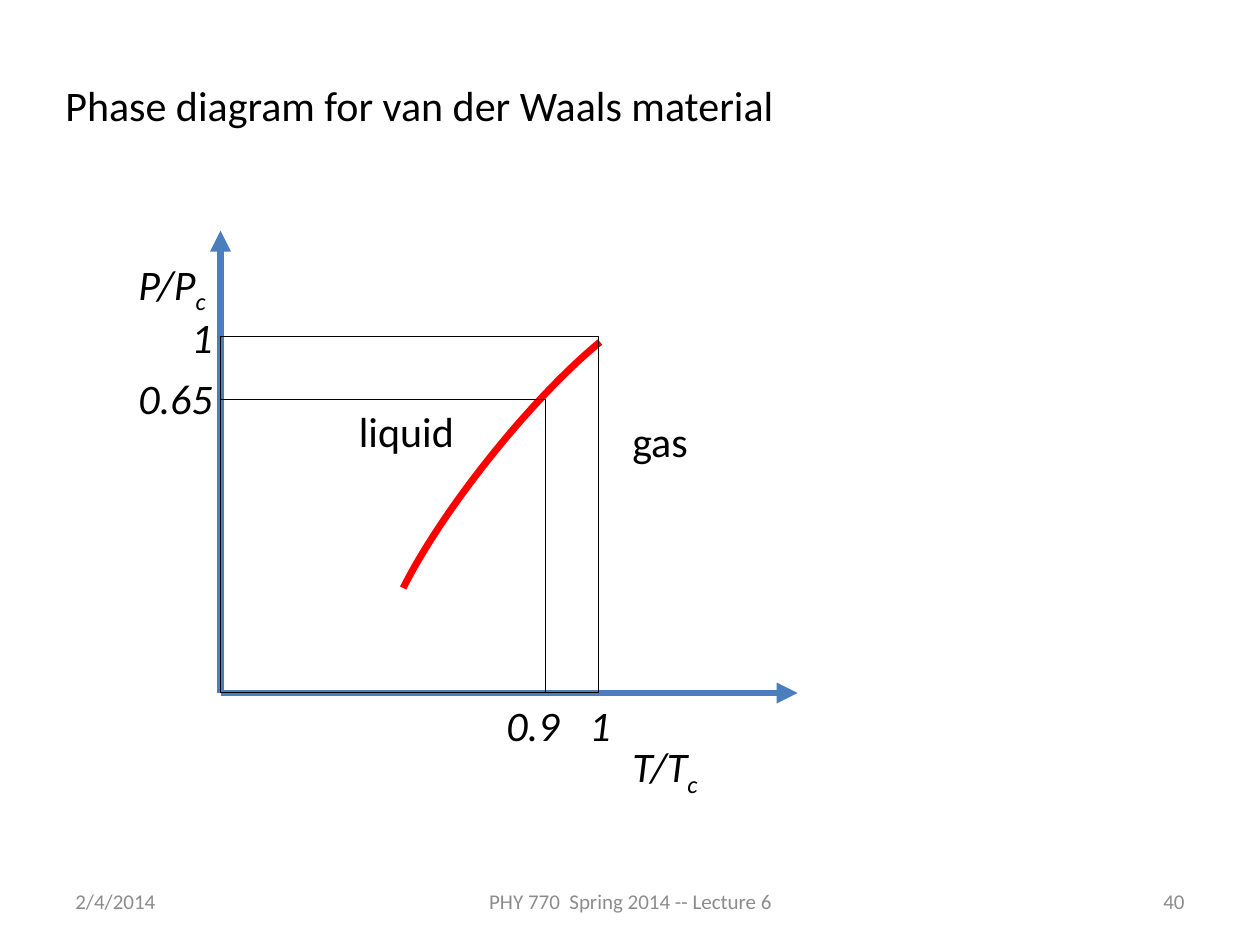
from pptx import Presentation
from pptx.dml.color import RGBColor
from pptx.enum import shapes, text
from pptx.oxml import parse_xml
from pptx.oxml.ns import nsdecls
from pptx.util import Inches, Pt

BLACK = RGBColor(0x00, 0x00, 0x00)
GRAY = RGBColor(0x8C, 0x8C, 0x8C)
BLUE = RGBColor(0x4B, 0x7E, 0xBC)
RED = RGBColor(0xFF, 0x00, 0x00)
ORIGIN_X, ORIGIN_Y = 1.75, 5.5

presentation = Presentation()
presentation.slide_width = Inches(10)
presentation.slide_height = Inches(7.5)
slide = presentation.slides.add_slide(presentation.slide_layouts[6])


def add_label(left, top, width, wording, subscript="", italic=False, size=24,
              color=BLACK, height=0.5, align=text.PP_ALIGN.LEFT,
              anchor=text.MSO_ANCHOR.TOP):
    box = slide.shapes.add_textbox(Inches(left), Inches(top), Inches(width), Inches(height))
    frame = box.text_frame
    frame.word_wrap = True
    frame.vertical_anchor = anchor
    paragraph = frame.paragraphs[0]
    paragraph.text = wording
    paragraph.alignment = align
    if subscript:
        run = paragraph.add_run()
        run.text = subscript
        run.font._element.set("baseline", "-25000")
    for run in paragraph.runs:
        run.font.name = "Calibri"
        run.font.size = Pt(size)
        run.font.italic = italic
        run.font.color.rgb = color


def add_outline(kind, left, top, width, height, color, weight):
    shape = slide.shapes.add_shape(kind, Inches(left), Inches(top), Inches(width), Inches(height))
    shape.shadow.inherit = False
    shape.fill.background()
    shape.line.color.rgb = color
    shape.line.width = Pt(weight)
    return shape


# Footer
for left, width, wording, align in [
    (0.5, 2.33, "2/4/2014", text.PP_ALIGN.LEFT),
    (3.42, 3.17, "PHY 770  Spring 2014 -- Lecture 6", text.PP_ALIGN.CENTER),
    (7.17, 2.33, "40", text.PP_ALIGN.RIGHT),
]:
    add_label(left, 6.95, width, wording, size=12, color=GRAY, height=0.4,
              align=align, anchor=text.MSO_ANCHOR.MIDDLE)

add_label(0.42, 0.58, 9.08, "Phase diagram for van der Waals material")

# Pressure and temperature axes
for end_x, end_y in [(ORIGIN_X, 1.83), (6.33, ORIGIN_Y)]:
    axis = slide.shapes.add_connector(
        shapes.MSO_CONNECTOR.STRAIGHT,
        Inches(ORIGIN_X), Inches(ORIGIN_Y), Inches(end_x), Inches(end_y))
    axis.line.color.rgb = BLUE
    axis.line.width = Pt(4)
    axis.line._get_or_add_ln().append(
        parse_xml(f'<a:tailEnd {nsdecls("a")} type="triangle"/>'))
    axis._element.spPr.append(parse_xml(f'<a:effectLst {nsdecls("a")}/>'))

# Coexistence curve
curve = add_outline(shapes.MSO_SHAPE.ARC, 2.42, 3.48, 3.54, 0.75, RED, 4)
curve.rotation = 308.7
curve.adjustments[0] = 115.17
curve.adjustments[1] = 208.78

# Guides from the axes to the marked points on the curve
for width, height in [(3, 2.83), (2.58, 2.33)]:
    add_outline(shapes.MSO_SHAPE.RECTANGLE, ORIGIN_X, ORIGIN_Y - height,
                width, height, BLACK, 0.5)

# Axis titles and values
for left, top, width, wording, subscript in [
    (1, 2, 1.17, "P/P", "c"),
    (4.92, 5.83, 1.17, "T/T", "c"),
    (4.58, 5.5, 0.42, "1", ""),
    (1.42, 2.42, 0.42, "1", ""),
    (3.92, 5.5, 0.67, "0.9", ""),
    (1, 2.91, 1, "0.65", ""),
]:
    add_label(left, top, width, wording, subscript, italic=True)

# Phases
add_label(4.92, 3.25, 1.17, "gas")
add_label(2.75, 3.17, 1.17, "liquid")

presentation.save("out.pptx")
